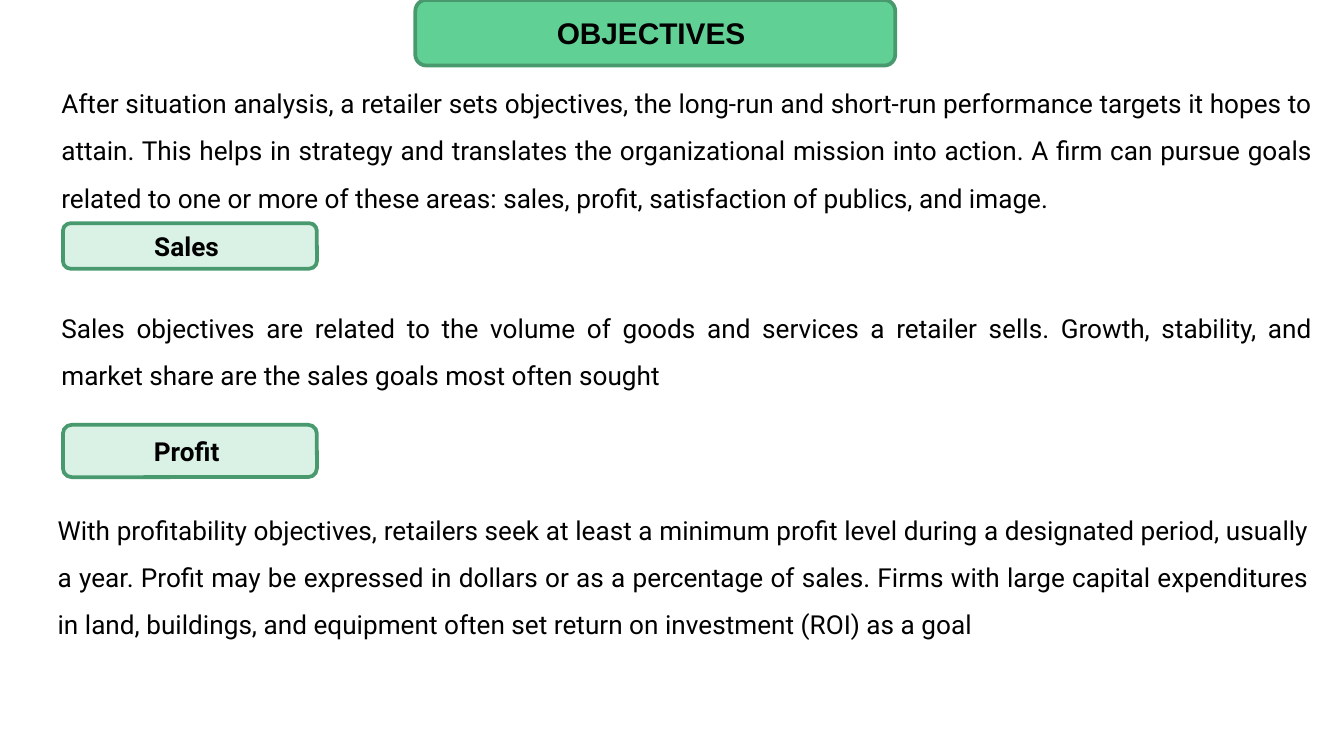
from pptx import Presentation
from pptx.dml.color import RGBColor
from pptx.enum.shapes import MSO_SHAPE as Shape
from pptx.enum.text import MSO_ANCHOR as Anchor, MSO_AUTO_SIZE as AutoSize, PP_ALIGN as Align
from pptx.util import Cm, Pt

BLACK = "000000"
BORDER = "489A6E"
TITLE_FILL = "61D095"
HEADING_FILL = "DAF2E6"

INTRODUCTION = (
    "After situation analysis, a retailer sets objectives, the long-run and short-run "
    "performance targets it hopes to attain. This helps in strategy and translates the "
    "organizational mission into action. A firm can pursue goals related to one or more "
    "of these areas: sales, profit, satisfaction of publics, and image."
)
SALES = (
    "Sales objectives are related to the volume of goods and services a retailer sells. "
    "Growth, stability, and market share are the sales goals most often sought"
)
PROFIT = (
    "With profitability objectives, retailers seek at least a minimum profit level during "
    "a designated period, usually a year. Profit may be expressed in dollars or as a "
    "percentage of sales. Firms with large capital expenditures in land, buildings, and "
    "equipment often set return on investment (ROI) as a goal"
)


def color(value):
    return RGBColor.from_string(value)


def write_text(shape, text, align, font_name="Roboto", size=14, bold=False):
    shape.text_frame.word_wrap = True
    paragraph = shape.text_frame.paragraphs[0]
    paragraph.text = text
    paragraph.alignment = align
    font = paragraph.font
    font.name = font_name
    font.size = Pt(size)
    font.bold = bold
    font.color.rgb = color(BLACK)
    return paragraph


def add_label(slide, text, left, top, width, height, fill, **font):
    shape = slide.shapes.add_shape(
        Shape.ROUNDED_RECTANGLE, Cm(left), Cm(top), Cm(width), Cm(height)
    )
    shape.shadow.inherit = False
    shape.fill.solid()
    shape.fill.fore_color.rgb = color(fill)
    shape.line.color.rgb = color(BORDER)
    shape.line.width = Pt(2)
    shape.text_frame.vertical_anchor = Anchor.MIDDLE
    write_text(shape, text, Align.CENTER, bold=True, **font)


def add_heading(slide, text, top, height):
    add_label(slide, text, 1.19, top, 4.8, height, HEADING_FILL)


def add_body(slide, text, left, top, height):
    box = slide.shapes.add_textbox(Cm(left), Cm(top), Cm(24.16), Cm(height))
    paragraph = write_text(box, text, Align.JUSTIFY)
    paragraph.line_spacing = 1.5
    box.text_frame.auto_size = AutoSize.SHAPE_TO_FIT_TEXT


def main():
    presentation = Presentation()
    presentation.slide_width = Cm(25.4)
    presentation.slide_height = Cm(14.29)
    slide = presentation.slides.add_slide(presentation.slide_layouts[6])

    add_label(slide, "OBJECTIVES ", 7.85, 0, 9.07, 1.24, TITLE_FILL, font_name="Arial", size=16)
    add_body(slide, INTRODUCTION, 0.91, 1.24, 2.95)
    add_heading(slide, "Sales ", 4.22, 0.86)
    add_body(slide, SALES, 0.91, 5.49, 1.96)
    add_heading(slide, "Profit ", 8.03, 0.99)
    add_body(slide, PROFIT, 0.84, 9.3, 2.84)

    presentation.save("out.pptx")


if __name__ == "__main__":
    main()
